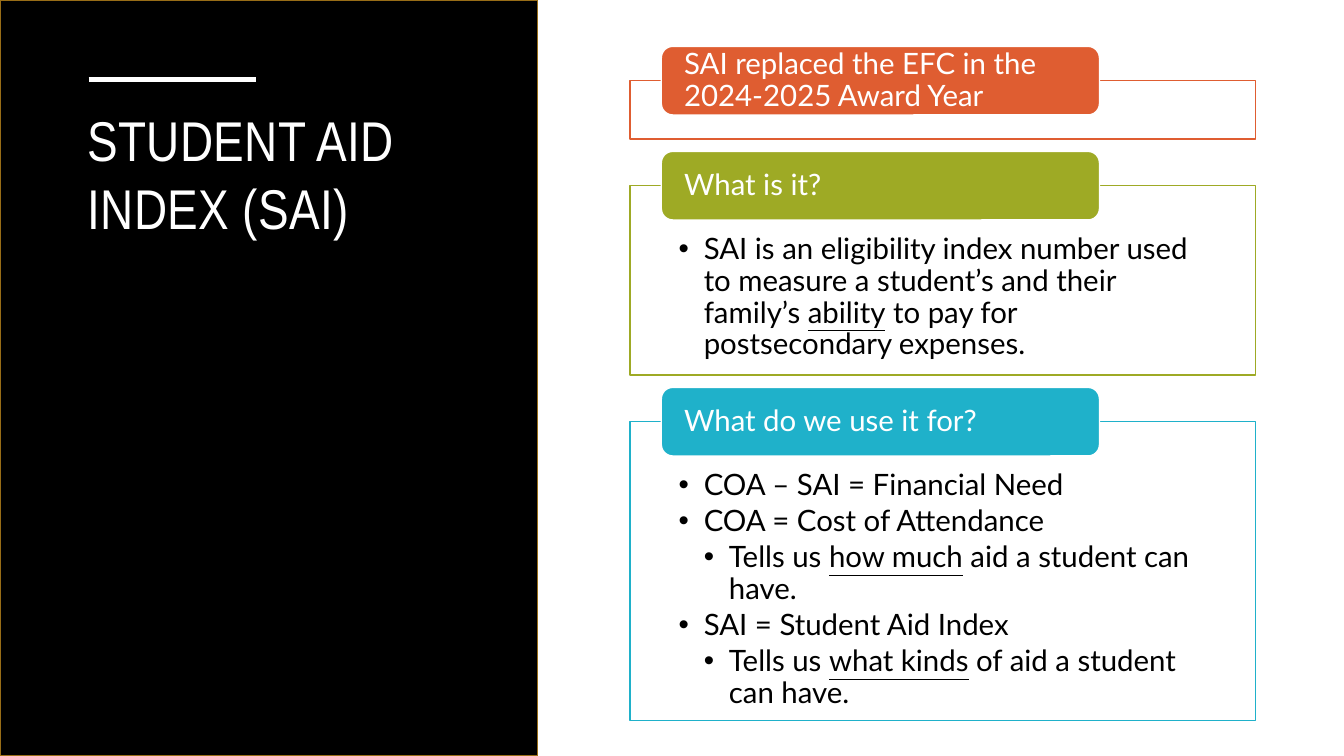
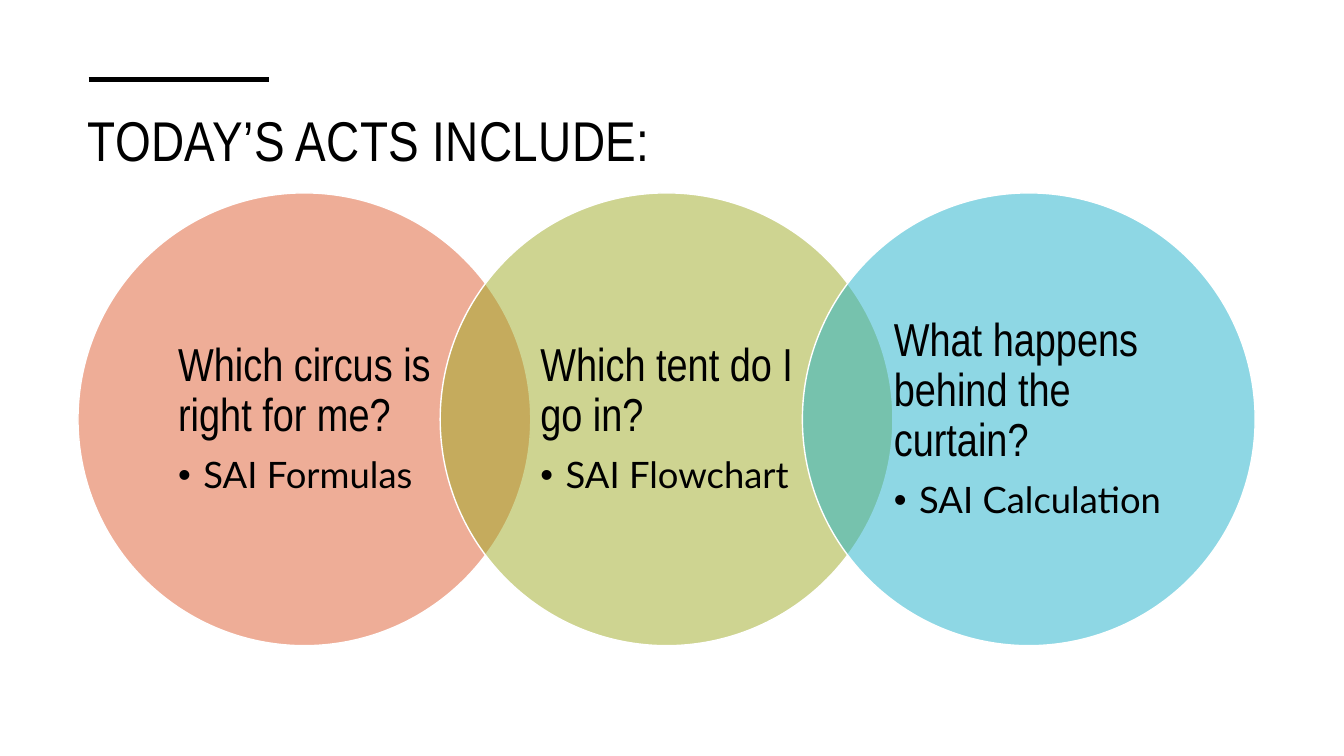
from dataclasses import dataclass
from math import sqrt

from lxml.etree import SubElement
from pptx import Presentation
from pptx.dml.color import RGBColor
from pptx.enum.shapes import MSO_CONNECTOR, MSO_SHAPE
from pptx.enum.text import MSO_ANCHOR, MSO_AUTO_SIZE, PP_ALIGN
from pptx.oxml.ns import qn
from pptx.util import Pt

RECTANGLE, ROUNDED, ELLIPSE = MSO_SHAPE.RECTANGLE, MSO_SHAPE.ROUNDED_RECTANGLE, MSO_SHAPE.OVAL
STRAIGHT = MSO_CONNECTOR.STRAIGHT
TOP, MIDDLE = MSO_ANCHOR.TOP, MSO_ANCHOR.MIDDLE
LEFT = PP_ALIGN.LEFT
NO_FIT = MSO_AUTO_SIZE.NONE

COLORS = {
    "black": "000000",
    "white": "FFFFFF",
    "gold": "986D17",
    "orange": "DF5D31",
    "olive": "9EAA25",
    "teal": "1FB1CA",
}
TITLE_FONT, BODY_FONT = "Arial Narrow", "Lato"
SLIDE_WIDTH, SLIDE_HEIGHT = 960, 540
COMPARISON_LAYOUT = 4
BULLET_INDENT = 18


@dataclass(frozen=True)
class Span:
    text: str
    underline: bool = False


@dataclass(frozen=True)
class Line:
    spans: tuple[Span, ...]
    size: float
    font: str = BODY_FONT
    color: str = "black"
    level: int = 0  # 0 is a heading without a bullet


@dataclass(frozen=True)
class Box:
    left: float
    top: float
    width: float
    height: float


@dataclass(frozen=True)
class Section:
    heading: str
    color: str
    height: float
    lines: tuple[Line, ...] = ()


@dataclass(frozen=True)
class Act:
    question: str
    topic: str
    color: str
    inset: float


# Shared drawing functions
def rgb(color: str) -> RGBColor:
    return RGBColor.from_string(COLORS[color])


def place(shape, box: Box) -> None:
    shape.left, shape.top = Pt(box.left), Pt(box.top)
    shape.width, shape.height = Pt(box.width), Pt(box.height)


def paint(shape, fill: str, outline: str, opacity: int = 100) -> None:
    shape.fill.solid()
    shape.fill.fore_color.rgb = rgb(fill)
    shape.line.color.rgb = rgb(outline)
    shape.line.width = Pt(1)
    if opacity < 100:
        fill_color = shape.element.spPr.find(qn("a:solidFill"))[0]
        SubElement(fill_color, qn("a:alpha"), val=str(opacity * 1000))


def add_painted(slide, kind, box: Box, fill: str, outline: str, opacity: int = 100):
    shape = slide.shapes.add_shape(
        kind, Pt(box.left), Pt(box.top), Pt(box.width), Pt(box.height))
    shape.shadow.inherit = False
    paint(shape, fill, outline, opacity)
    return shape


def bring_to_front(slide, shape) -> None:
    slide.shapes.element.append(shape.element)


def set_frame(shape, anchor, insets: tuple[float, float, float, float]):
    frame = shape.text_frame
    frame.word_wrap = True
    frame.auto_size = NO_FIT
    frame.vertical_anchor = anchor
    frame.margin_left, frame.margin_top, frame.margin_right, frame.margin_bottom = map(Pt, insets)
    return frame


def add_run(paragraph, text: str, size: float, font: str, color: str):
    run = paragraph.add_run()
    run.text = text
    run.font.size = Pt(size)
    run.font.name = font
    run.font.bold = False
    run.font.color.rgb = rgb(color)
    return run


def write_lines(frame, lines: tuple[Line, ...]) -> None:
    for number, line in enumerate(lines):
        paragraph = frame.add_paragraph() if number else frame.paragraphs[0]
        paragraph.alignment = LEFT
        paragraph.level = line.level
        paragraph.line_spacing = 0.9
        paragraph.space_before = Pt(0)
        paragraph.space_after = Pt(round(line.size * (0.15 if line.level else 0.35), 1))
        properties = paragraph._p.get_or_add_pPr()
        properties.set("marL", str(Pt(BULLET_INDENT * line.level)))
        properties.set("indent", str(Pt(-BULLET_INDENT if line.level else 0)))
        if line.level:
            SubElement(properties, qn("a:buFont"), typeface="Arial")
            SubElement(properties, qn("a:buChar"), char="•")
        else:
            SubElement(properties, qn("a:buNone"))
        for span in line.spans:
            run = add_run(paragraph, span.text, line.size, line.font, line.color)
            if span.underline:
                run.font.underline = True


def add_heading(slide, text: str, color: str, box: Box, rule_length: float) -> None:
    # Accent rule
    left, top = 63.4, 56.9
    rule = slide.shapes.add_connector(
        STRAIGHT, Pt(left), Pt(top), Pt(left + rule_length), Pt(top))
    rule.line.color.rgb = rgb(color)
    rule.line.width = Pt(3.5)
    SubElement(rule.element.spPr, qn("a:effectLst"))
    # Title
    title = slide.shapes.title
    place(title, box)
    frame = set_frame(title, TOP, (7.2, 3.6, 7.2, 3.6))
    paragraph = frame.paragraphs[0]
    paragraph.alignment = LEFT
    run = add_run(paragraph, text, 40, TITLE_FONT, color)
    run._r.get_or_add_rPr().set("spc", "30")
    bring_to_front(slide, title)


def new_slide(deck):
    slide = deck.slides.add_slide(deck.slide_layouts[COMPARISON_LAYOUT])
    bodies = [holder for holder in slide.placeholders if holder.placeholder_format.idx > 0]
    return slide, bodies


def remove_unused(bodies) -> None:
    for body in bodies:
        body.element.getparent().remove(body.element)


# Slide 1: what the index is
def bullet(*spans: Span, level: int = 1) -> Line:
    return Line(spans, 21, level=level)


SECTIONS = (
    Section("SAI replaced the EFC in the 2024-2025 Award Year", "orange", 41.8),
    Section("What is it?", "olive", 135.4, (
        bullet(
            Span("SAI is an eligibility index number used to measure a student’s and their family’s "),
            Span("ability", True),
            Span(" to pay for postsecondary expenses.")),
    )),
    Section("What do we use it for?", "teal", 213.6, (
        bullet(Span("COA – SAI = Financial Need")),
        bullet(Span("COA = Cost of Attendance")),
        bullet(Span("Tells us "), Span("how much", True),
               Span(" aid a student can have."), level=2),
        bullet(Span("SAI = Student Aid Index")),
        bullet(Span("Tells us "), Span("what kinds", True),
               Span(" of aid a student can have."), level=2),
    )),
)


def build_index_slide(deck) -> None:
    slide, bodies = new_slide(deck)
    add_painted(slide, RECTANGLE, Box(0, 0, 384, SLIDE_HEIGHT), "black", "gold")
    add_heading(slide, "STUDENT AID INDEX (SAI)", "white", Box(55.4, 72, 293, 293), 119.5)

    tab_height, gap = 49, 8.7
    tab_top = 33.1
    for section in SECTIONS:
        # Outlined panel, with its list
        panel_top = tab_top + tab_height / 2
        panel_box = Box(450, panel_top, 447, section.height)
        if section.lines:
            panel = bodies.pop(0)
            place(panel, panel_box)
            paint(panel, "white", section.color, 90)
            write_lines(set_frame(panel, TOP, (34.7, 34.7, 34.7, 11.5)), section.lines)
            bring_to_front(slide, panel)
        else:
            add_painted(slide, RECTANGLE, panel_box, "white", section.color, 90)
        # Heading tab across the top edge of the panel
        tab = add_painted(slide, ROUNDED, Box(472.4, tab_top, 313, tab_height),
                          section.color, "white")
        heading = Line((Span(section.heading),), 21, color="white")
        write_lines(set_frame(tab, MIDDLE, (13.9, 0, 13.9, 0)), (heading,))
        tab_top = panel_top + section.height + gap
    remove_unused(bodies)


# Slide 2: the three acts
ACTS = (
    Act("Which circus is right for me?", "SAI Formulas", "orange", 24.2),
    Act("Which tent do I go in?", "SAI Flowchart", "olive", 24.2),
    Act("What happens behind the curtain?", "SAI Calculation", "teal", 18),
)


def build_acts_slide(deck) -> None:
    slide, bodies = new_slide(deck)
    add_heading(slide, "TODAY’S ACTS INCLUDE:", "black", Box(55.4, 72, 850, 83), 129)

    diameter = 323.4
    step = diameter * 0.8
    text_side = diameter / sqrt(2)  # square inscribed in the circle
    text_offset = (diameter - text_side) / 2
    circle_top = 137.8
    for number, act in enumerate(ACTS):
        circle_left = 55.7 + number * step
        add_painted(slide, ELLIPSE, Box(circle_left, circle_top, diameter, diameter),
                    act.color, "white", 50)
        body = bodies.pop(0)
        place(body, Box(circle_left + text_offset, circle_top + text_offset,
                        text_side, text_side))
        frame = set_frame(body, MIDDLE, (act.inset, 3.6, 16, 3.6))
        write_lines(frame, (
            Line((Span(act.question),), 33, TITLE_FONT),
            Line((Span(act.topic),), 26, level=1),
        ))
        bring_to_front(slide, body)
    remove_unused(bodies)


def main() -> None:
    deck = Presentation()
    deck.slide_width, deck.slide_height = Pt(SLIDE_WIDTH), Pt(SLIDE_HEIGHT)
    build_index_slide(deck)
    build_acts_slide(deck)
    deck.save("out.pptx")


if __name__ == "__main__":
    main()
